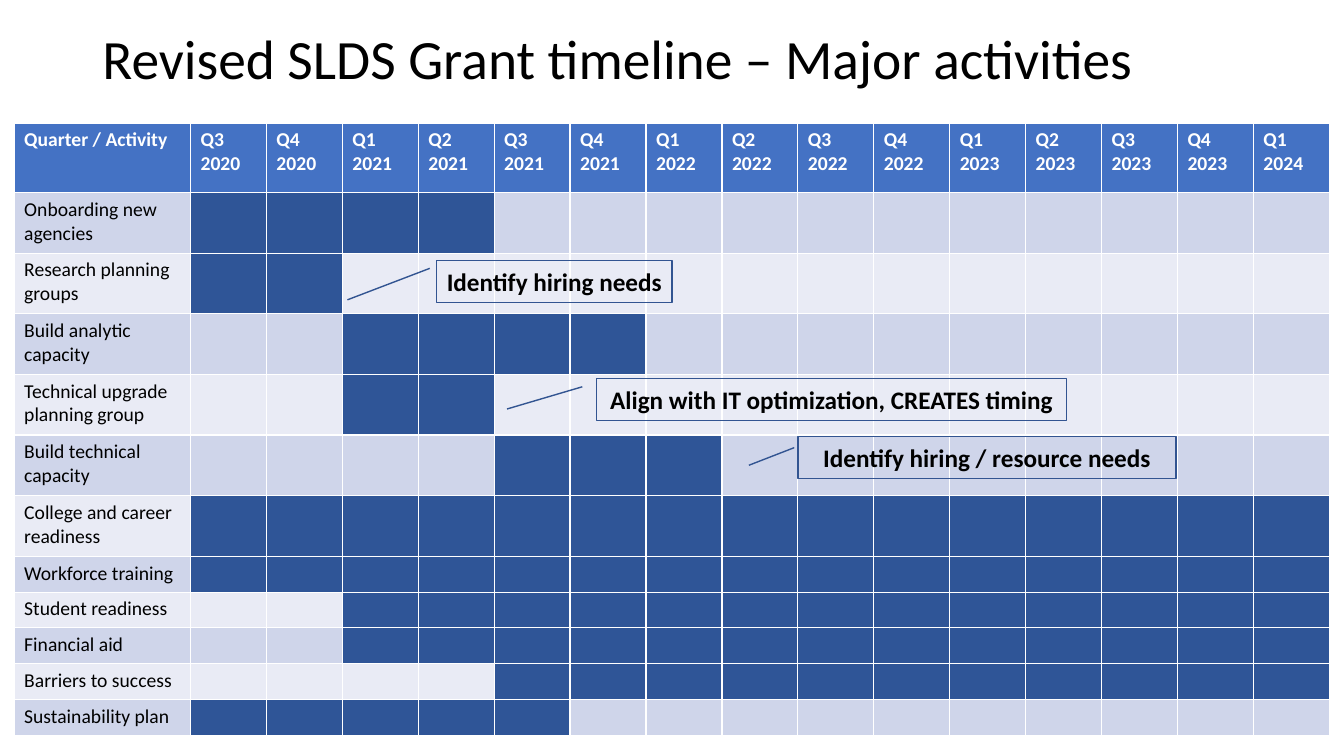
from pptx import Presentation
from pptx.dml.color import RGBColor
from pptx.enum.shapes import MSO_SHAPE
from pptx.enum.text import MSO_ANCHOR, MSO_AUTO_SIZE, PP_ALIGN
from pptx.util import Inches, Pt

CALLOUT = MSO_SHAPE.LINE_CALLOUT_1
MIDDLE, TOP = MSO_ANCHOR.MIDDLE, MSO_ANCHOR.TOP
LEFT, CENTER = PP_ALIGN.LEFT, PP_ALIGN.CENTER
NO_FIT = MSO_AUTO_SIZE.NONE

BLACK = RGBColor(0x00, 0x00, 0x00)
WHITE = RGBColor(0xFF, 0xFF, 0xFF)
HEAD = RGBColor(0x44, 0x72, 0xC4)
BAR = RGBColor(0x2F, 0x55, 0x97)
EDGE = RGBColor(0x32, 0x54, 0x91)
BANDS = (RGBColor(0xCF, 0xD5, 0xEA), RGBColor(0xE9, 0xEB, 0xF5))

WIDTH, HEIGHT = Inches(13.333), Inches(7.5)
UNIT = WIDTH / 160
NAME_W, TERM_W = 21, 9.04
HEAD_H, TALL, SHORT = 8.28, 7.22, 4.26
TERMS = 15

TITLE_FONT = {"name": "Calibri", "size": Pt(39.6), "bold": False}
HEAD_FONT = {"name": "Calibri", "size": Pt(14), "bold": True}
CELL_FONT = {"name": "Calibri", "size": Pt(14), "bold": False}
NOTE_FONT = {"name": "Calibri", "size": Pt(18), "bold": True}

TASKS = [
    ("Onboarding new agencies", TALL, 1, 4),
    ("Research planning groups", TALL, 1, 2),
    ("Build analytic capacity", TALL, 3, 6),
    ("Technical upgrade planning group", TALL, 3, 4),
    ("Build technical capacity", TALL, 5, 7),
    ("College and career readiness", TALL, 1, TERMS),
    ("Workforce training", SHORT, 1, TERMS),
    ("Student readiness", SHORT, 3, TERMS),
    ("Financial aid", SHORT, 3, TERMS),
    ("Barriers to success", SHORT, 5, TERMS),
    ("Sustainability plan", SHORT, 1, 5),
]

NOTES = [
    ("Identify hiring needs", (52, 31, 28, 5), (0.19, -0.03, 0.94, -0.38)),
    ("Identify hiring / resource needs", (95, 52, 45, 5),
     (0.26, -0.01, 0.68, -0.13)),
    ("Align with IT optimization, CREATES timing", (71, 45.1, 56, 5),
     (0.19, -0.03, 0.72, -0.19)),
]


def span(count):
    """Turn a count of grid units into a length."""
    return round(count * UNIT)


def apply(item, values):
    """Set each named value on the item."""
    for name, value in values.items():
        setattr(item, name, value)


def write(frame, text, font, color, align, anchor):
    """Put one styled paragraph in a text frame."""
    apply(frame, {"word_wrap": True, "vertical_anchor": anchor})
    line = frame.paragraphs[0]
    line.alignment = align
    run = line.add_run()
    run.text = text
    apply(run.font, font)
    run.font.color.rgb = color
    return line


def paint(cell, color):
    """Fill a cell and keep its empty line as small as the text."""
    cell.fill.solid()
    cell.fill.fore_color.rgb = color
    line = cell.text_frame.paragraphs[0]
    if not line.runs:
        line._p.get_or_add_endParaRPr().set("sz", "1400")


def add_title(slide, text):
    """Place and format the title."""
    title = slide.shapes.title
    apply(title, {"left": span(11), "top": span(2.4),
                  "width": span(138), "height": span(9.84)})
    frame = title.text_frame
    frame.auto_size = NO_FIT
    line = write(frame, text, TITLE_FONT, BLACK, LEFT, MIDDLE)
    line.line_spacing = 0.9


def add_chart_grid(slide):
    """Draw the timeline table with one bar per task."""
    wide = NAME_W + TERMS * TERM_W
    high = HEAD_H + sum(task[1] for task in TASKS)
    grid = slide.shapes.add_table(
        len(TASKS) + 1, TERMS + 1,
        span(1.68), span(14.64), span(wide), span(high)).table
    for col, column in enumerate(grid.columns):
        column.width = span(TERM_W if col else NAME_W)
        quarter = col + 1
        text = f"Q{quarter % 4 + 1} {2020 + quarter // 4}"
        cell = grid.cell(0, col)
        write(cell.text_frame, text if col else "Quarter / Activity",
              HEAD_FONT, WHITE, LEFT, TOP)
        paint(cell, HEAD)
    grid.rows[0].height = span(HEAD_H)
    for row, (name, tall, first, last) in enumerate(TASKS, 1):
        grid.rows[row].height = span(tall)
        write(grid.cell(row, 0).text_frame, name,
              CELL_FONT, BLACK, LEFT, TOP)
        for col in range(TERMS + 1):
            band = BANDS[(row - 1) % 2]
            paint(grid.cell(row, col), BAR if first <= col <= last else band)


def add_note(slide, text, box, tail):
    """Add a bordered callout whose tail points at a bar."""
    note = slide.shapes.add_shape(CALLOUT, *map(span, box))
    for index, share in enumerate(tail):
        note.adjustments[index] = share
    note.shadow.inherit = False
    note.fill.background()
    note.line.color.rgb = EDGE
    note.line.width = Pt(1)
    write(note.text_frame, text, NOTE_FONT, BLACK, CENTER, MIDDLE)


def main():
    """Build the slide and save it."""
    deck = Presentation()
    apply(deck, {"slide_width": WIDTH, "slide_height": HEIGHT})
    slide = deck.slides.add_slide(deck.slide_layouts[5])
    add_title(slide, "Revised SLDS Grant timeline – Major activities")
    add_chart_grid(slide)
    for note in NOTES:
        add_note(slide, *note)
    deck.save("out.pptx")


if __name__ == "__main__":
    main()
